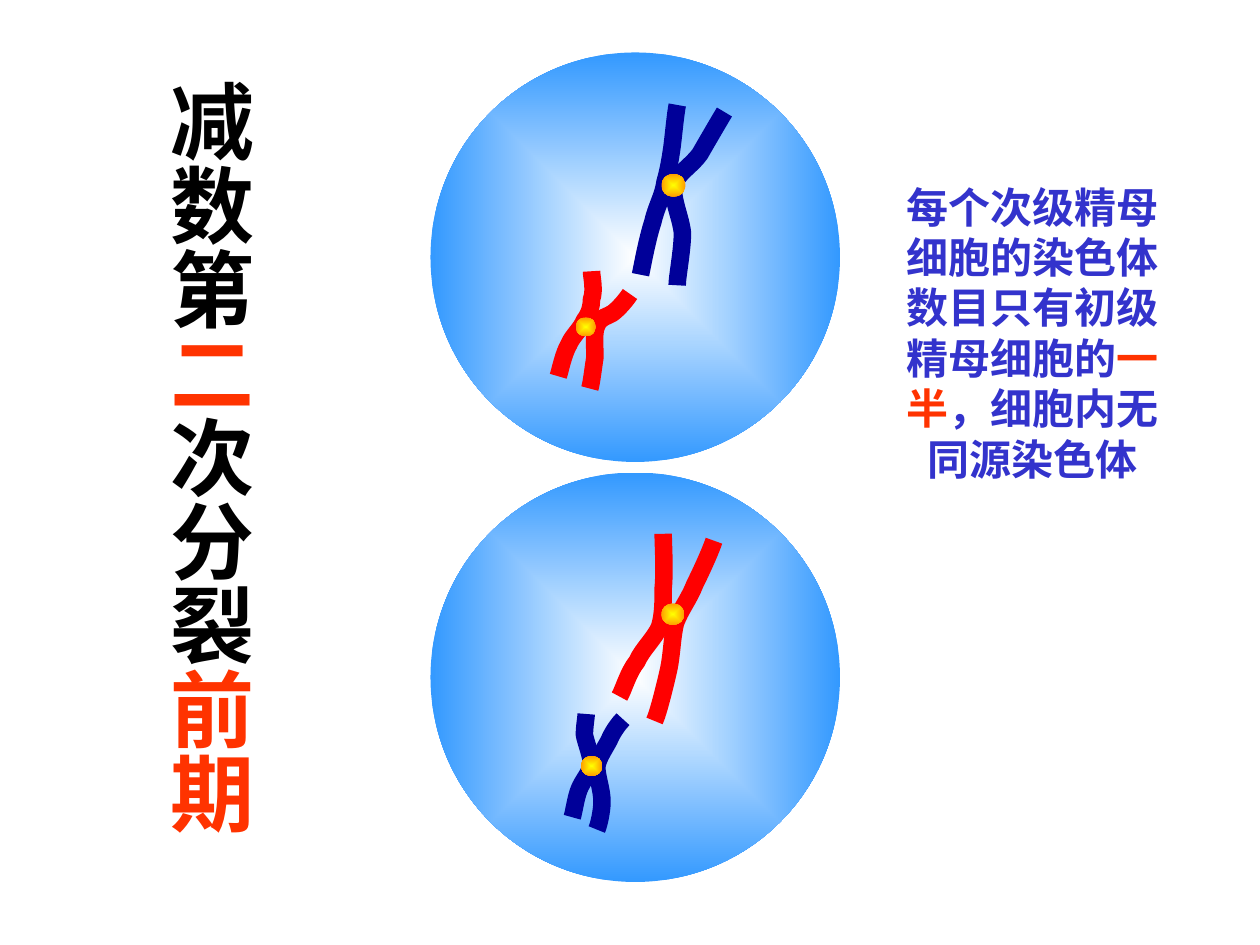
from lxml.etree import SubElement
from pptx import Presentation
from pptx.dml.color import RGBColor
from pptx.enum.shapes import MSO_SHAPE
from pptx.enum.text import MSO_ANCHOR, MSO_AUTO_SIZE, PP_ALIGN
from pptx.oxml.ns import qn
from pptx.util import Pt

BLACK = RGBColor(0x00, 0x00, 0x00)
WHITE = RGBColor(0xFF, 0xFF, 0xFF)
SKY = RGBColor(0x33, 0x99, 0xFF)
RED = RGBColor(0xFF, 0x00, 0x00)
NAVY = RGBColor(0x00, 0x00, 0x99)
YELLOW = RGBColor(0xFF, 0xFF, 0x00)
ORANGE = RGBColor(0xFF, 0x99, 0x00)
HIGHLIGHT = RGBColor(0xFF, 0x33, 0x00)
INDIGO = RGBColor(0x33, 0x33, 0xCC)

CELL_LEFT, CELL_TOP, CELL_SIZE, CELL_STEP = 246, 30, 234, 240

CHROMOSOMES = [
    (RED, (329, 181.4, 11.5, 10.8, 0.6), [
        [(337, 222), (338, 219), (339, 210), (340, 204), (340, 198), (339, 190), (341, 186),
         (343, 181), (347, 181), (350, 179), (354, 176), (358, 171), (360, 168)],
        [(319, 215), (320, 212), (322, 202), (325, 197), (327, 192), (332, 188), (334, 183),
         (337, 179), (338, 175), (338, 171), (340, 166), (338, 158), (338, 155)],
    ]),
    (NAVY, (332, 432, 12.2, 11.5, 357.9), [
        [(341, 474), (342, 472), (344, 464), (344, 458), (344, 451), (341, 444), (341, 438),
         (342, 432), (347, 426), (349, 421), (351, 417), (354, 413), (356, 411)],
        [(327, 467), (328, 464), (329, 456), (331, 451), (333, 446), (337, 442), (338, 437),
         (338, 432), (335, 425), (334, 420), (334, 415), (335, 410), (335, 408)],
    ]),
    (RED, (378, 344.9, 13, 12.2, 356.5), [
        [(374, 412), (376, 408), (380, 392), (382, 383), (384, 374), (384, 364), (386, 356),
         (389, 348), (394, 342), (397, 334), (401, 326), (406, 315), (408, 309)],
        [(354, 398), (356, 395), (359, 384), (364, 378), (367, 371), (374, 365), (377, 358),
         (379, 351), (379, 344), (379, 336), (380, 326), (379, 311), (379, 305)],
    ]),
    (NAVY, (378, 99.4, 13.7, 13, 357.6), [
        [(387, 163), (387, 158), (390, 143), (390, 133), (389, 124), (384, 114), (385, 106),
         (387, 99), (395, 95), (400, 88), (404, 81), (411, 69), (414, 64)],
        [(366, 157), (367, 152), (370, 136), (373, 127), (375, 118), (379, 112), (380, 104),
         (382, 97), (383, 91), (384, 84), (385, 76), (386, 65), (387, 60)],
    ]),
]


def place(shape, left, top, width, height):
    shape.left, shape.top = Pt(left), Pt(top)
    shape.width, shape.height = Pt(width), Pt(height)


def add_glowing_ellipse(shapes, left, top, width, height, inner, outer, rotation=0):
    shape = shapes.add_shape(MSO_SHAPE.OVAL, Pt(left), Pt(top), Pt(width), Pt(height))
    shape.rotation = rotation
    shape.shadow.inherit = False
    shape.line.fill.background()
    shape.fill.gradient()
    for stop, color in zip(shape.fill.gradient_stops, (inner, outer)):
        stop.color.rgb = color
    gradient = shape._element.spPr.find(qn("a:gradFill"))
    gradient.remove(gradient.find(qn("a:lin")))
    center = SubElement(gradient, qn("a:path"), path="shape")
    SubElement(center, qn("a:fillToRect"), l="50000", t="50000", r="50000", b="50000")


def add_curve(shapes, points, color, width):
    builder = shapes.build_freeform(*points[0], scale=Pt(1))
    builder.add_line_segments(points[1:], close=False)
    shape = builder.convert_to_shape()
    shape.shadow.inherit = False
    shape.fill.background()
    shape.line.color.rgb = color
    shape.line.width = Pt(width)
    outline = next(shape._element.iter(qn("a:path")))
    segments = outline.findall(qn("a:lnTo"))
    for start in range(0, len(segments), 3):
        curve = SubElement(outline, qn("a:cubicBezTo"))
        for segment in segments[start:start + 3]:
            curve.append(segment[0])
            outline.remove(segment)


def add_chromosome(shapes, color, centromere, chromatids):
    for points in chromatids:
        add_curve(shapes, points, color, 10)
    left, top, width, height, rotation = centromere
    add_glowing_ellipse(shapes, left, top, width, height, YELLOW, ORANGE, rotation)


def write_text(shape, pieces, size, align, wrap=True, vertical=False):
    frame = shape.text_frame
    frame.word_wrap = wrap
    frame.auto_size = MSO_AUTO_SIZE.SHAPE_TO_FIT_TEXT
    frame.vertical_anchor = MSO_ANCHOR.TOP
    if vertical:
        frame._txBody.bodyPr.set("vert", "eaVert")
    paragraph = frame.paragraphs[0]
    paragraph.alignment = align
    for text, color in pieces:
        run = paragraph.add_run()
        run.text = text
        run.font.name = "Times New Roman"
        run.font.size = Pt(size)
        run.font.bold = True
        run.font.color.rgb = color


def main():
    presentation = Presentation()
    presentation.slide_width, presentation.slide_height = Pt(720), Pt(540)
    slide = presentation.slides.add_slide(presentation.slide_layouts[5])
    shapes = slide.shapes

    title = shapes.title
    place(title, 84, 42, 72, 441)
    write_text(title, [("减数第", BLACK), ("二", HIGHLIGHT), ("次分裂", BLACK), ("前期", HIGHLIGHT)],
               size=48, align=PP_ALIGN.LEFT, wrap=False, vertical=True)

    cells = shapes.add_group_shape()
    for index in range(2):
        add_glowing_ellipse(cells.shapes, CELL_LEFT, CELL_TOP + index * CELL_STEP,
                            CELL_SIZE, CELL_SIZE, WHITE, SKY)
    for chromosome in CHROMOSOMES:
        add_chromosome(shapes, *chromosome)

    note = shapes.add_textbox(Pt(502), Pt(100), Pt(176), Pt(180))
    write_text(note, [("每个次级精母细胞的染色体数目只有初级精母细胞的", INDIGO),
                      ("一半", HIGHLIGHT), ("，细胞内无同源染色体", INDIGO)],
               size=24, align=PP_ALIGN.CENTER)

    presentation.save("out.pptx")


if __name__ == "__main__":
    main()
